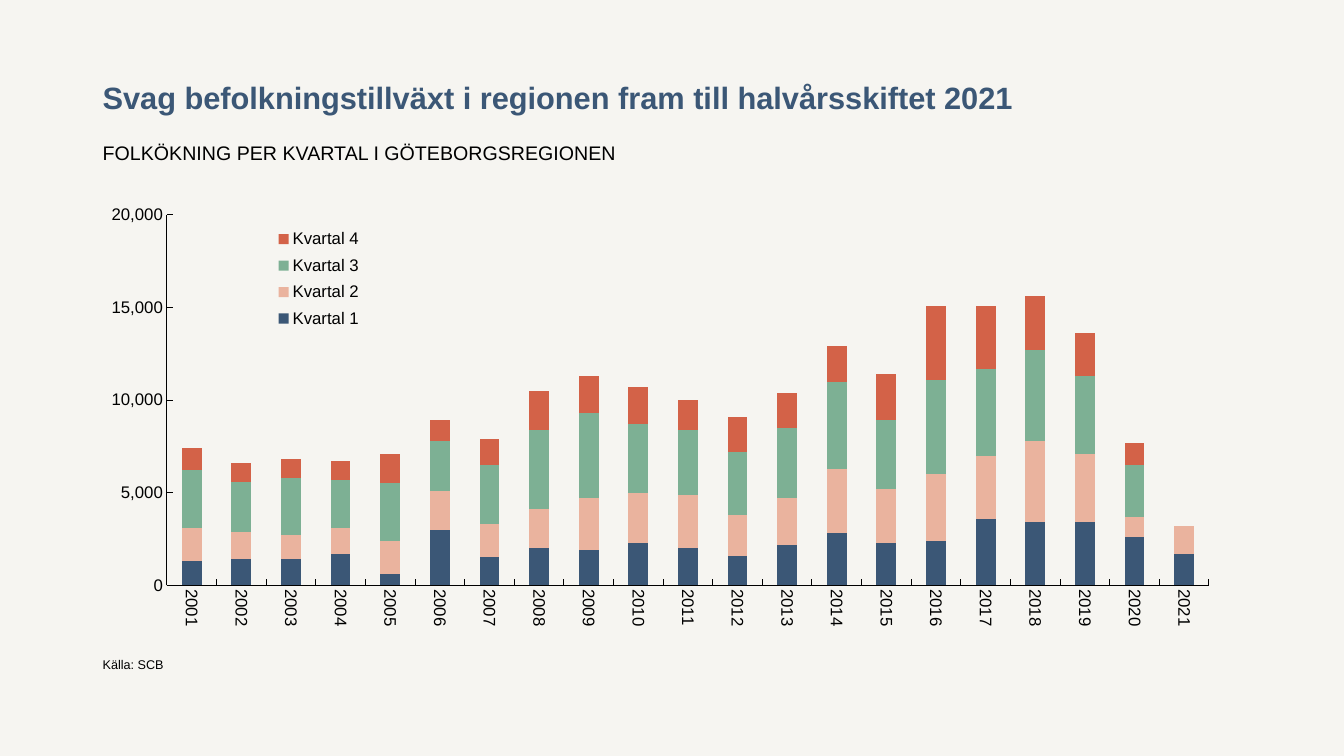
from dataclasses import dataclass

from pptx import Presentation
from pptx.chart.data import CategoryChartData
from pptx.dml.color import RGBColor
from pptx.enum import chart as charts, text as texts
from pptx.oxml import parse_xml
from pptx.oxml.ns import nsdecls
from pptx.util import Pt


@dataclass(frozen=True)
class Theme:
    font: str = "Arial"
    background: str = "F6F5F1"
    title: str = "3B5776"
    ink: str = "000000"
    title_size: float = 22
    subtitle_size: float = 14
    chart_size: float = 12
    source_size: float = 9
    axis_width: float = 0.75


THEME = Theme()
LEFT, WIDTH = 66.24, 828

YEARS = [str(year) for year in range(2001, 2022)]
QUARTERS = [
    ("Kvartal 1", "3B5776",
     [1300, 1400, 1400, 1700, 600, 3000, 1500, 2000, 1900, 2300, 2000,
      1600, 2200, 2800, 2300, 2400, 3600, 3400, 3400, 2600, 1700]),
    ("Kvartal 2", "EAB39E",
     [1800, 1500, 1300, 1400, 1800, 2100, 1800, 2100, 2800, 2700, 2900,
      2200, 2500, 3500, 2900, 3600, 3400, 4400, 3700, 1100, 1500]),
    ("Kvartal 3", "7DB094",
     [3100, 2700, 3100, 2600, 3100, 2700, 3200, 4300, 4600, 3700, 3500,
      3400, 3800, 4700, 3700, 5100, 4700, 4900, 4200, 2800, None]),
    ("Kvartal 4", "D36248",
     [1200, 1000, 1000, 1000, 1600, 1100, 1400, 2100, 2000, 2000, 1600,
      1900, 1900, 1900, 2500, 4000, 3400, 2900, 2300, 1200, None]),
]


def color(value):
    return RGBColor.from_string(value)


def style_font(font, size, ink=THEME.ink, bold=False):
    font.name = THEME.font
    font.size = Pt(size)
    font.bold = bold
    font.color.rgb = color(ink)


def add_text(slide, content, top, height, size, ink=THEME.ink, bold=False,
             anchor=texts.MSO_ANCHOR.TOP, line_spacing=None):
    shape = slide.shapes.add_textbox(Pt(LEFT), Pt(top), Pt(WIDTH), Pt(height))
    frame = shape.text_frame
    frame.word_wrap = True
    frame.vertical_anchor = anchor
    paragraph = frame.paragraphs[0]
    if line_spacing:
        paragraph.line_spacing = Pt(line_spacing)
    run = paragraph.add_run()
    run.text = content
    style_font(run.font, size, ink, bold)


def place(element, index, x, y, width, height, inner=False):
    """Give a plot area or legend a fixed place, in fractions of the chart."""
    for old in element.xpath("c:layout"):
        element.remove(old)
    target = '<c:layoutTarget val="inner"/>' if inner else ""
    sizes = "".join(f'<c:{tag} val="{value}"/>' for tag, value in
                    zip("xywh", (x, y, width, height)))
    element.insert(index, parse_xml(
        f'<c:layout {nsdecls("c")}><c:manualLayout>{target}'
        f'<c:xMode val="edge"/><c:yMode val="edge"/>{sizes}'
        '</c:manualLayout></c:layout>'))


def style_axis(axis):
    axis.has_major_gridlines = False
    axis.major_tick_mark = charts.XL_TICK_MARK.INSIDE
    axis.minor_tick_mark = charts.XL_TICK_MARK.NONE
    axis.format.line.color.rgb = color(THEME.ink)
    axis.format.line.width = Pt(THEME.axis_width)
    style_font(axis.tick_labels.font, THEME.chart_size)


def add_legend(chart):
    chart.has_legend = True
    legend = chart.legend
    legend.position = charts.XL_LEGEND_POSITION.RIGHT
    legend.include_in_layout = False
    style_font(legend.font, THEME.chart_size)
    place(chart.element.xpath("c:chart/c:legend")[0], 1, 0.14, 0.05, 0.11, 0.26)


def add_population_chart(slide, top, height):
    data = CategoryChartData(number_format="#,##0")
    data.categories = YEARS
    for name, _, values in QUARTERS:
        data.add_series(name, values)
    chart = slide.shapes.add_chart(
        charts.XL_CHART_TYPE.COLUMN_STACKED,
        Pt(LEFT), Pt(top), Pt(WIDTH), Pt(height), data).chart
    chart.has_title = False
    style_font(chart.font, THEME.chart_size)

    # Columns
    plot = chart.plots[0]
    plot.gap_width = 150
    plot.overlap = 100
    plot.vary_by_categories = False
    for series, (_, fill, _) in zip(plot.series, QUARTERS):
        series.format.fill.solid()
        series.format.fill.fore_color.rgb = color(fill)
    plot_area = chart.element.xpath("c:chart/c:plotArea")[0]
    place(plot_area, 0, 0.064, 0.035, 0.899, 0.841, inner=True)

    # Axes, with the years turned to read downwards
    style_axis(chart.category_axis)
    body = plot_area.xpath("c:catAx/c:txPr/a:bodyPr")[0]
    body.set("rot", "5400000")
    body.set("vert", "horz")
    value_axis = chart.value_axis
    style_axis(value_axis)
    value_axis.minimum_scale = 0
    value_axis.maximum_scale = 20000
    value_axis.major_unit = 5000
    value_axis.tick_labels.number_format = "#,##0"
    value_axis.tick_labels.number_format_is_linked = False

    add_legend(chart)


def main():
    presentation = Presentation()
    presentation.slide_width = Pt(960)
    presentation.slide_height = Pt(540)
    slide = presentation.slides.add_slide(presentation.slide_layouts[6])
    slide.background.fill.solid()
    slide.background.fill.fore_color.rgb = color(THEME.background)

    # Headings
    add_text(slide, "Svag befolkningstillväxt i regionen fram till halvårsskiftet 2021",
             28.8, 57.6, THEME.title_size, ink=THEME.title, bold=True,
             anchor=texts.MSO_ANCHOR.BOTTOM, line_spacing=31)
    add_text(slide, "FOLKÖKNING PER KVARTAL I GÖTEBORGSREGIONEN",
             97.2, 36.72, THEME.subtitle_size)

    # Chart and its source
    add_population_chart(slide, 142.56, 314.64)
    add_text(slide, "Källa: SCB", 465.84, 18, THEME.source_size,
             anchor=texts.MSO_ANCHOR.BOTTOM)

    presentation.save("out.pptx")


if __name__ == "__main__":
    main()
